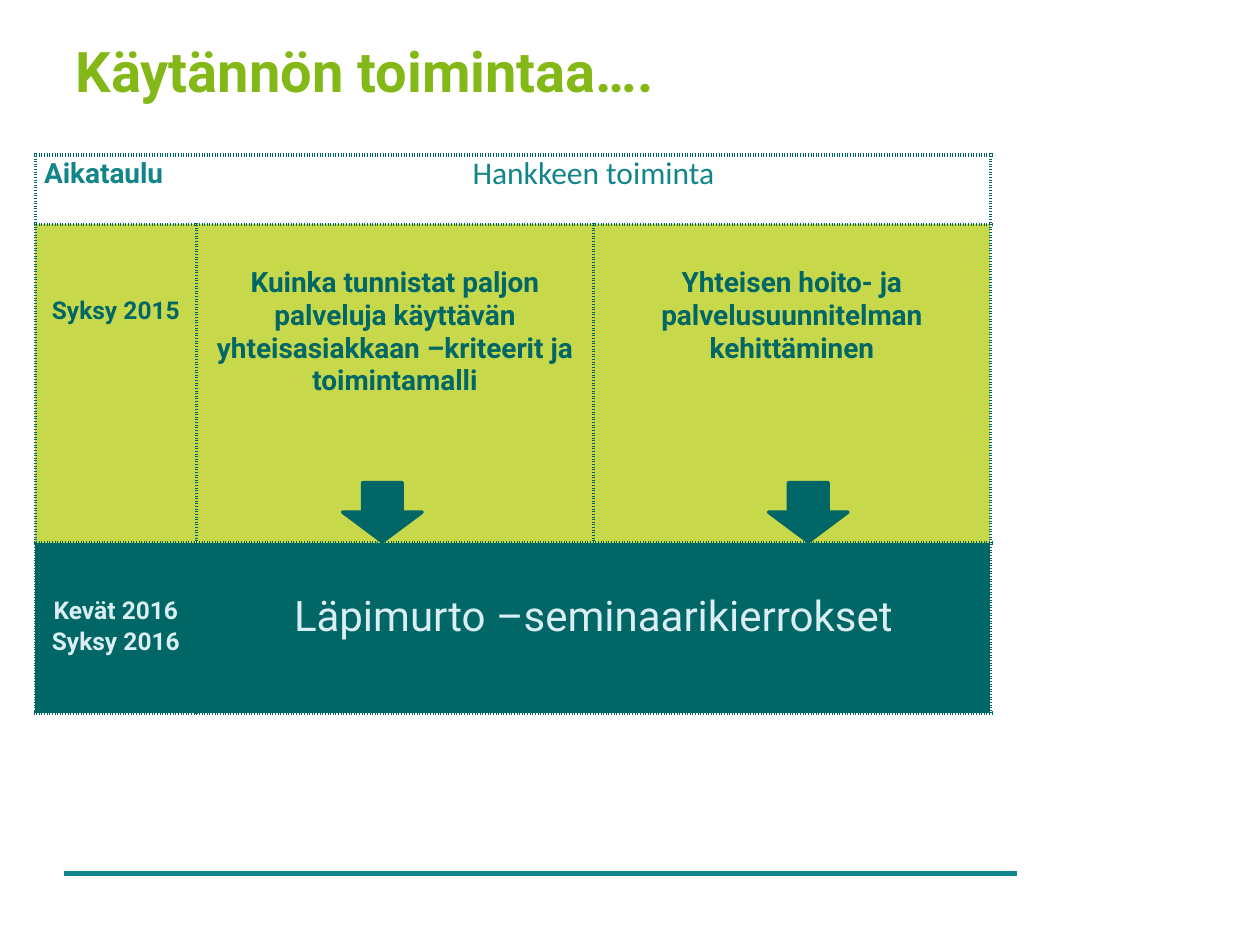
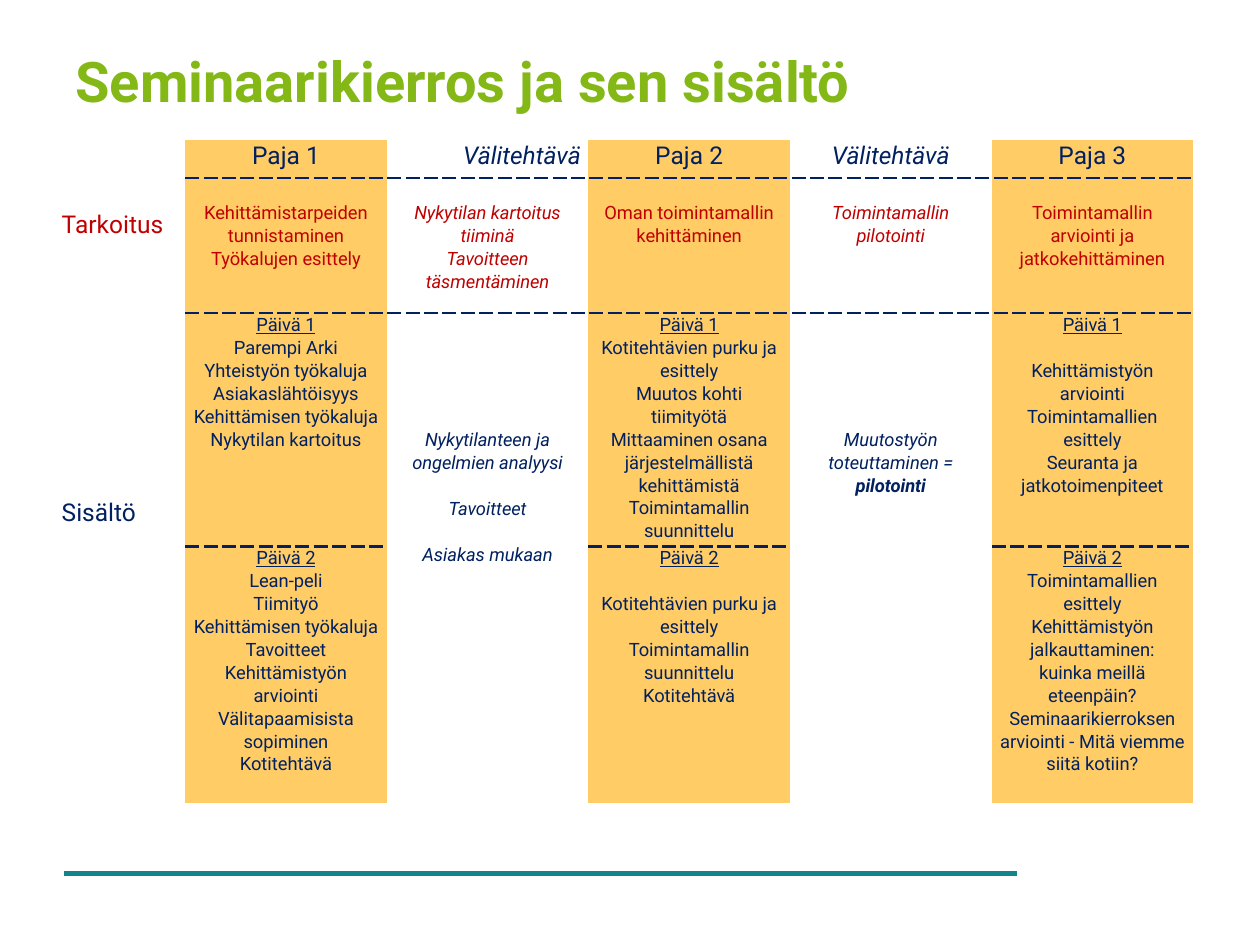
from dataclasses import dataclass

from lxml import etree
from pptx import Presentation
from pptx import util as u
from pptx.dml import color
from pptx.enum import shapes, text
from pptx.oxml import ns


class Theme:
    green, teal, dark_teal = "84B817", "12858A", "006666"
    lime, pale_blue = "C8D84B", "DBEEF4"
    navy, red, orange = "002060", "C00000", "FFCC66"
    font, header_font = "Roboto", "Calibri"
    title, feature, header, lead, label, detail = 32, 24, 18, 16, 14, 10.5
    line_height = 1.17
    loose = 1.07
    plain_table = "{2D5ABB26-0587-4C30-8999-92F81FD0307C}"


@dataclass
class Style:
    size: float
    color: str
    bold: bool = False
    italic: bool = False
    font: str = Theme.font
    spacing: float = Theme.loose
    align: str = "CENTER"


LEAD = Style(Theme.lead, Theme.dark_teal, bold=True, spacing=1)
DATE = Style(Theme.label, Theme.dark_teal, bold=True)

SCHEDULE_TITLE = ("Käytännön toimintaa….", 0.21, 0.78)
SCHEDULE_COLUMNS = (1.28, 3.15, 3.15)
SCHEDULE_ROWS = (0.55, 2.53, 1.35)
SCHEDULE = [
    (None, [
        (["Aikataulu"], 0, Style(Theme.lead, Theme.teal, bold=True, align="LEFT")),
        (["Hankkeen toiminta"], 0,
         Style(Theme.header, Theme.teal, font=Theme.header_font, spacing=1)),
    ]),
    (Theme.lime, [
        (["Syksy 2015"], 0.56, DATE),
        (["Kuinka tunnistat paljon palveluja käyttävän yhteisasiakkaan "
          "–kriteerit ja toimintamalli"], 0.34, LEAD),
        (["Yhteisen hoito- ja palvelusuunnitelman kehittäminen"], 0.34, LEAD),
    ]),
    (Theme.dark_teal, [
        (["Kevät 2016", "Syksy 2016"], 0.41,
         Style(Theme.label, Theme.pale_blue, bold=True)),
        (["Läpimurto –seminaarikierrokset"], 0.39,
         Style(Theme.feature, Theme.pale_blue, spacing=1)),
    ]),
]
ARROW_LEFTS = (2.72, 6.1)

SEMINAR_TITLE = ("Seminaarikierros ja sen sisältö", 0.29, 0.87)
SEMINAR_COLUMNS = (1.04, 1.6, 1.6, 1.6, 1.6, 1.6)
SEMINAR_ROWS = (0.29, 1.07, 1.85, 2.04)
WORKSHOP_COLUMNS = (1, 3, 5)
TASK_COLUMNS = (2, 4)
# Integers stand for that many empty lines; an asterisk starts bold text.
SEMINAR = [
    [[], ["Paja 1"], ["Välitehtävä"], ["Paja 2"], ["Välitehtävä"], ["Paja 3"]],
    [
        [1, "Tarkoitus"],
        [1, "Kehittämistarpeiden tunnistaminen", "Työkalujen esittely"],
        [1, "Nykytilan kartoitus tiiminä", "Tavoitteen täsmentäminen"],
        [1, "Oman toimintamallin kehittäminen"],
        [1, "Toimintamallin pilotointi"],
        [1, "Toimintamallin arviointi ja jatkokehittäminen"],
    ],
    [
        [6, "Sisältö"],
        ["Päivä 1", "Parempi Arki", "Yhteistyön työkaluja", "Asiakaslähtöisyys",
         "Kehittämisen työkaluja", "Nykytilan kartoitus"],
        [5, "Nykytilanteen ja ongelmien analyysi", 1, "Tavoitteet", 1, "Asiakas mukaan"],
        ["Päivä 1", "Kotitehtävien purku ja esittely", "Muutos kohti tiimityötä",
         "Mittaaminen osana järjestelmällistä kehittämistä",
         "Toimintamallin suunnittelu"],
        [5, "Muutostyön toteuttaminen = *pilotointi"],
        ["Päivä 1", 1, "Kehittämistyön arviointi", "Toimintamallien esittely",
         "Seuranta ja jatkotoimenpiteet"],
    ],
    [
        [],
        ["Päivä 2", "Lean-peli", "Tiimityö", "Kehittämisen työkaluja", "Tavoitteet",
         "Kehittämistyön arviointi", "Välitapaamisista sopiminen", "Kotitehtävä"],
        [],
        ["Päivä 2", 1, "Kotitehtävien purku ja esittely",
         "Toimintamallin suunnittelu", "Kotitehtävä"],
        [],
        ["Päivä 2", "Toimintamallien esittely", "Kehittämistyön jalkauttaminen:",
         "kuinka meillä eteenpäin?",
         "Seminaarikierroksen arviointi - Mitä viemme siitä kotiin?"],
    ],
]


def rgb(value):
    return color.RGBColor.from_string(value)


def add_footer_rule(slide):
    rule = slide.shapes.add_connector(
        shapes.MSO_CONNECTOR.STRAIGHT,
        u.Inches(0.51), u.Inches(6.93), u.Inches(8.07), u.Inches(6.93))
    rule.line.color.rgb = rgb(Theme.teal)
    rule.line.width = u.Pt(3)
    etree.SubElement(rule._element.spPr, ns.qn("a:effectLst"))


def add_slide(presentation, title, top, height):
    slide = presentation.slides.add_slide(presentation.slide_layouts[5])
    add_footer_rule(slide)
    shape = slide.shapes.title
    shape.left, shape.top = u.Inches(0.5), u.Inches(top)
    shape.width, shape.height = u.Inches(9), u.Inches(height)
    frame = shape.text_frame
    frame.text = title
    frame.vertical_anchor = text.MSO_ANCHOR.TOP
    frame.margin_top = u.Inches(0.08)
    write_style(frame.paragraphs[0],
                Style(Theme.title, Theme.green, bold=True, spacing=1, align="LEFT"))
    return slide


def write_style(paragraph, style):
    paragraph.alignment = getattr(text.PP_ALIGN, style.align)
    paragraph.line_spacing = style.spacing
    font = paragraph.font
    font.name, font.size = style.font, u.Pt(style.size)
    font.bold, font.italic = style.bold, style.italic
    font.color.rgb = rgb(style.color)


def add_table(slide, left, top, columns, rows):
    frame = slide.shapes.add_table(
        len(rows), len(columns), u.Inches(left), u.Inches(top),
        u.Inches(sum(columns)), u.Inches(sum(rows)))
    table = frame.table
    table.first_row = table.horz_banding = False
    table._tbl.tblPr[0].text = Theme.plain_table
    for column, width in zip(table.columns, columns):
        column.width = u.Inches(width)
    for row, height in zip(table.rows, rows):
        row.height = u.Inches(height)
    return table


def set_borders(cell, sides, line_color, width, dash):
    properties = cell._tc.get_or_add_tcPr()
    for side in sides:
        line = etree.SubElement(properties, ns.qn(f"a:ln{side}"), w=str(u.Pt(width)))
        fill = etree.SubElement(line, ns.qn("a:solidFill"))
        etree.SubElement(fill, ns.qn("a:srgbClr"), val=line_color)
        etree.SubElement(line, ns.qn("a:prstDash"), val=dash)


def set_fill(cell, fill_color):
    if fill_color:
        cell.fill.solid()
        cell.fill.fore_color.rgb = rgb(fill_color)
    else:
        cell.fill.background()


def write_cell(cell, content, style, inset, top=0):
    cell.margin_left = cell.margin_right = u.Inches(inset)
    cell.margin_top = cell.margin_bottom = 0
    line = style.size * Theme.line_height * style.spacing
    gap, paragraph = u.Inches(top), None
    for item in content:
        if isinstance(item, int):
            gap = u.Pt(item * line)
            continue
        if paragraph is None:
            paragraph = cell.text_frame.paragraphs[0]
            cell.margin_top = gap
        else:
            paragraph = cell.text_frame.add_paragraph()
            paragraph.space_before = gap
        gap = 0
        regular, _, strong = item.partition("*")
        paragraph.add_run().text = regular
        write_style(paragraph, style)
        if strong:
            run = paragraph.add_run()
            run.text, run.font.bold = strong, True
        if item.startswith("Päivä "):
            paragraph.font.underline = True


def build_schedule(presentation):
    slide = add_slide(presentation, *SCHEDULE_TITLE)
    table = add_table(slide, 0.28, 1.23, SCHEDULE_COLUMNS, SCHEDULE_ROWS)
    header_sides = ("LTB", "RTB", "RTB")
    for row, (fill_color, entries) in enumerate(SCHEDULE):
        for column in range(len(SCHEDULE_COLUMNS)):
            cell = table.cell(row, column)
            sides = "LRTB" if row else header_sides[column]
            set_borders(cell, sides, Theme.dark_teal, 2.25, "sysDot")
            set_fill(cell, fill_color)
        for column, (content, top, style) in enumerate(entries):
            write_cell(table.cell(row, column), content, style, 0.07, top)
        if len(entries) == 2:
            table.cell(row, 1).merge(table.cell(row, 2))
    for left in ARROW_LEFTS:
        arrow = slide.shapes.add_shape(
            shapes.MSO_SHAPE.DOWN_ARROW, u.Inches(left), u.Inches(3.83),
            u.Inches(0.63), u.Inches(0.47))
        arrow.shadow.inherit = False
        arrow.fill.solid()
        arrow.fill.fore_color.rgb = arrow.line.color.rgb = rgb(Theme.dark_teal)
        arrow.line.width = u.Pt(2)


def seminar_style(row, column):
    return Style(
        Theme.label if row == 0 or column == 0 else Theme.detail,
        Theme.red if row == 1 else Theme.navy,
        italic=column in TASK_COLUMNS,
        align="LEFT" if column == 0 else "RIGHT" if (row, column) == (0, 2) else "CENTER")


def build_seminar(presentation):
    slide = add_slide(presentation, *SEMINAR_TITLE)
    table = add_table(slide, 0.43, 1.11, SEMINAR_COLUMNS, SEMINAR_ROWS)
    for row, entries in enumerate(SEMINAR):
        for column, content in enumerate(entries):
            cell = table.cell(row, column)
            workshop = column in WORKSHOP_COLUMNS
            sides = ""
            if column and (row in (1, 2) or row == 3 and workshop):
                sides += "T"
            if column and (row < 2 or row == 2 and workshop):
                sides += "B"
            for side in sides:
                day_break = (row, side) in ((2, "B"), (3, "T"))
                set_borders(cell, side, Theme.navy, 2.25 if day_break else 1.5, "sysDash")
            set_fill(cell, Theme.orange if workshop else None)
            write_cell(cell, content, seminar_style(row, column), 0.06)
    for column in (0, *TASK_COLUMNS):
        table.cell(2, column).merge(table.cell(3, column))


def main():
    presentation = Presentation()
    presentation.slide_width, presentation.slide_height = u.Inches(10), u.Inches(7.5)
    build_schedule(presentation)
    build_seminar(presentation)
    presentation.save("out.pptx")


if __name__ == "__main__":
    main()
